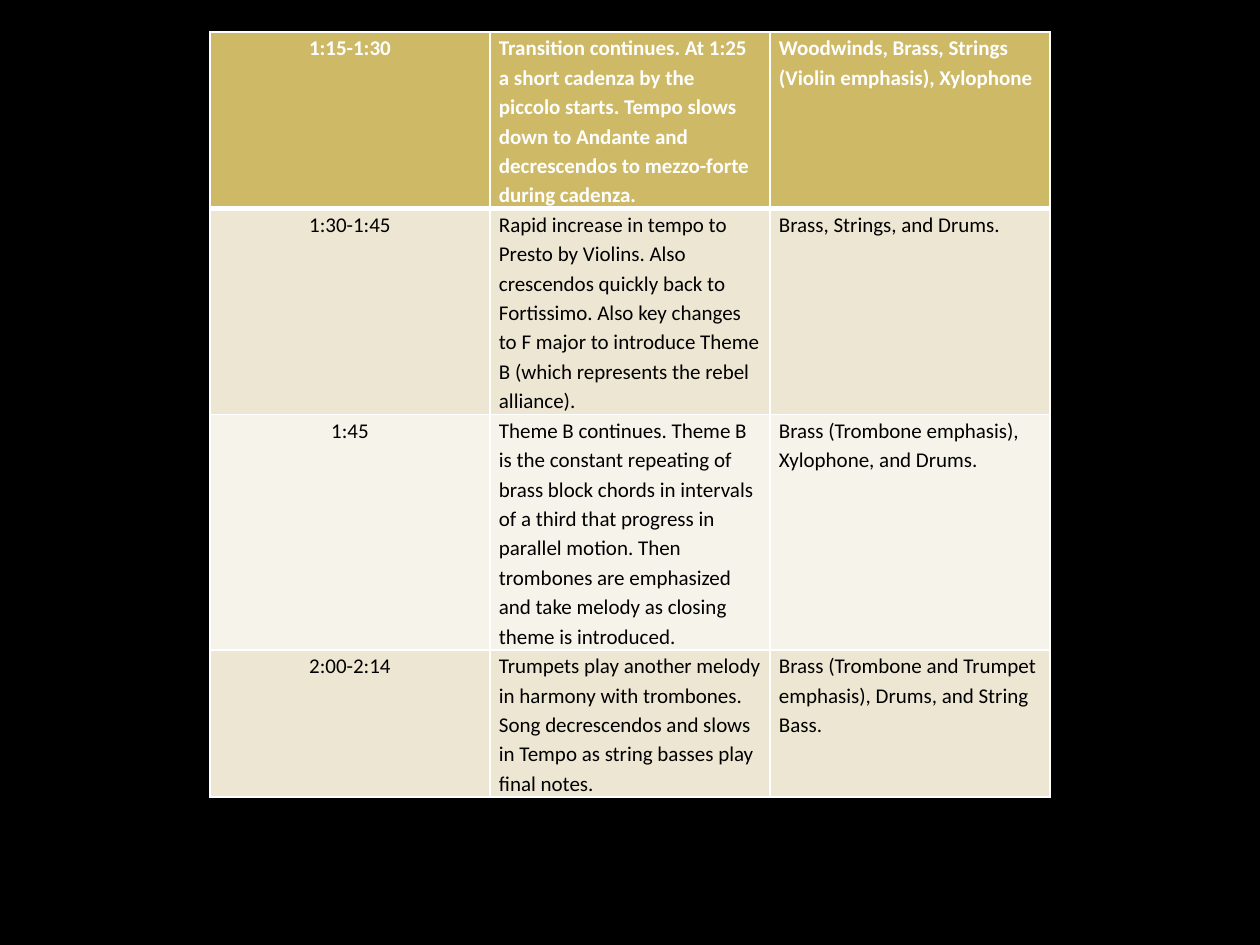
from lxml.etree import SubElement
from pptx import Presentation
from pptx.dml.color import RGBColor
from pptx.enum.text import PP_ALIGN
from pptx.oxml.ns import qn
from pptx.util import Emu, Pt

EMU_PER_PX = 914400 // 126
PAGE_WIDTH, PAGE_HEIGHT = 1260, 945
TABLE_LEFT, TABLE_TOP, TABLE_HEIGHT = 210, 32, 782
COLUMN_WIDTH, ROW_HEIGHT = 280, 52
CELL_PADDING = 9

BLACK, WHITE = "000000", "FFFFFF"
HEADER_FILL = "CEB966"
BAND_FILLS = ["EDE6D3", "F6F3EA"]

# Time, musical events, instruments
SECTIONS = [
    ("1:15-1:30",
     "Transition continues. At 1:25 a short cadenza by the piccolo starts. Tempo slows "
     "down to Andante and decrescendos to mezzo-forte during cadenza.",
     "Woodwinds, Brass, Strings (Violin emphasis), Xylophone"),
    ("1:30-1:45",
     "Rapid increase in tempo to Presto by Violins. Also crescendos quickly back to "
     "Fortissimo. Also key changes to F major to introduce Theme B (which represents "
     "the rebel alliance).",
     "Brass, Strings, and Drums."),
    ("1:45",
     "Theme B continues. Theme B is the constant repeating of brass block chords in "
     "intervals of a third that progress in parallel motion. Then trombones are "
     "emphasized and take melody as closing theme is introduced.",
     "Brass (Trombone emphasis), Xylophone, and Drums."),
    ("2:00-2:14",
     "Trumpets play another melody in harmony with trombones. Song decrescendos and "
     "slows in Tempo as string basses play final notes.",
     "Brass (Trombone and Trumpet emphasis), Drums, and String Bass."),
]


def px(length):
    return Emu(length * EMU_PER_PX)


def color(hex_code):
    return RGBColor.from_string(hex_code)


def paint(fill, hex_code):
    fill.solid()
    fill.fore_color.rgb = color(hex_code)


def write_text(frame, text, size=12, font="Calibri", hex_code=BLACK, bold=False,
               align=PP_ALIGN.LEFT, line_spacing=1.15):
    para = frame.paragraphs[0]
    para.alignment = align
    para.line_spacing = line_spacing
    span = para.add_run()
    span.text = text
    span.font.size = Pt(size)
    span.font.name = font
    span.font.bold = bold
    span.font.color.rgb = color(hex_code)


def set_borders(cell, top=1, bottom=1):
    properties = cell._tc.get_or_add_tcPr()
    widths = {"lnL": 1, "lnR": 1, "lnT": top, "lnB": bottom}
    # Border lines come before the fill in the cell properties
    for position, (side, width) in enumerate(widths.items()):
        line = properties.makeelement(qn(f"a:{side}"), {"w": str(Pt(width))})
        properties.insert(position, line)
        solid = SubElement(line, qn("a:solidFill"))
        SubElement(solid, qn("a:srgbClr"), val=WHITE)


def fill_cell(cell, text, row, column):
    is_header = row == 0
    cell.margin_left = cell.margin_right = px(CELL_PADDING)
    cell.margin_top = cell.margin_bottom = 0
    paint(cell.fill, HEADER_FILL if is_header else BAND_FILLS[(row - 1) % 2])
    set_borders(cell, top=3 if row == 1 else 1, bottom=3 if is_header else 1)
    write_text(cell.text_frame, text, bold=is_header,
               hex_code=WHITE if is_header else BLACK,
               align=PP_ALIGN.CENTER if column == 0 else PP_ALIGN.LEFT)


def add_listening_table(page, sections):
    column_count = len(sections[0])
    frame = page.shapes.add_table(
        len(sections), column_count, px(TABLE_LEFT), px(TABLE_TOP),
        px(COLUMN_WIDTH * column_count), px(TABLE_HEIGHT))
    table = frame.table
    for column in table.columns:
        column.width = px(COLUMN_WIDTH)
    # Rows grow to fit their text
    for row in table.rows:
        row.height = px(ROW_HEIGHT)
    frame.height = px(TABLE_HEIGHT)
    for row, section in enumerate(sections):
        for column, text in enumerate(section):
            fill_cell(table.cell(row, column), text, row, column)


def main():
    deck = Presentation()
    deck.slide_width, deck.slide_height = px(PAGE_WIDTH), px(PAGE_HEIGHT)
    page = deck.slides.add_slide(deck.slide_layouts[6])
    paint(page.background.fill, BLACK)
    add_listening_table(page, SECTIONS)
    deck.save("out.pptx")


if __name__ == "__main__":
    main()
